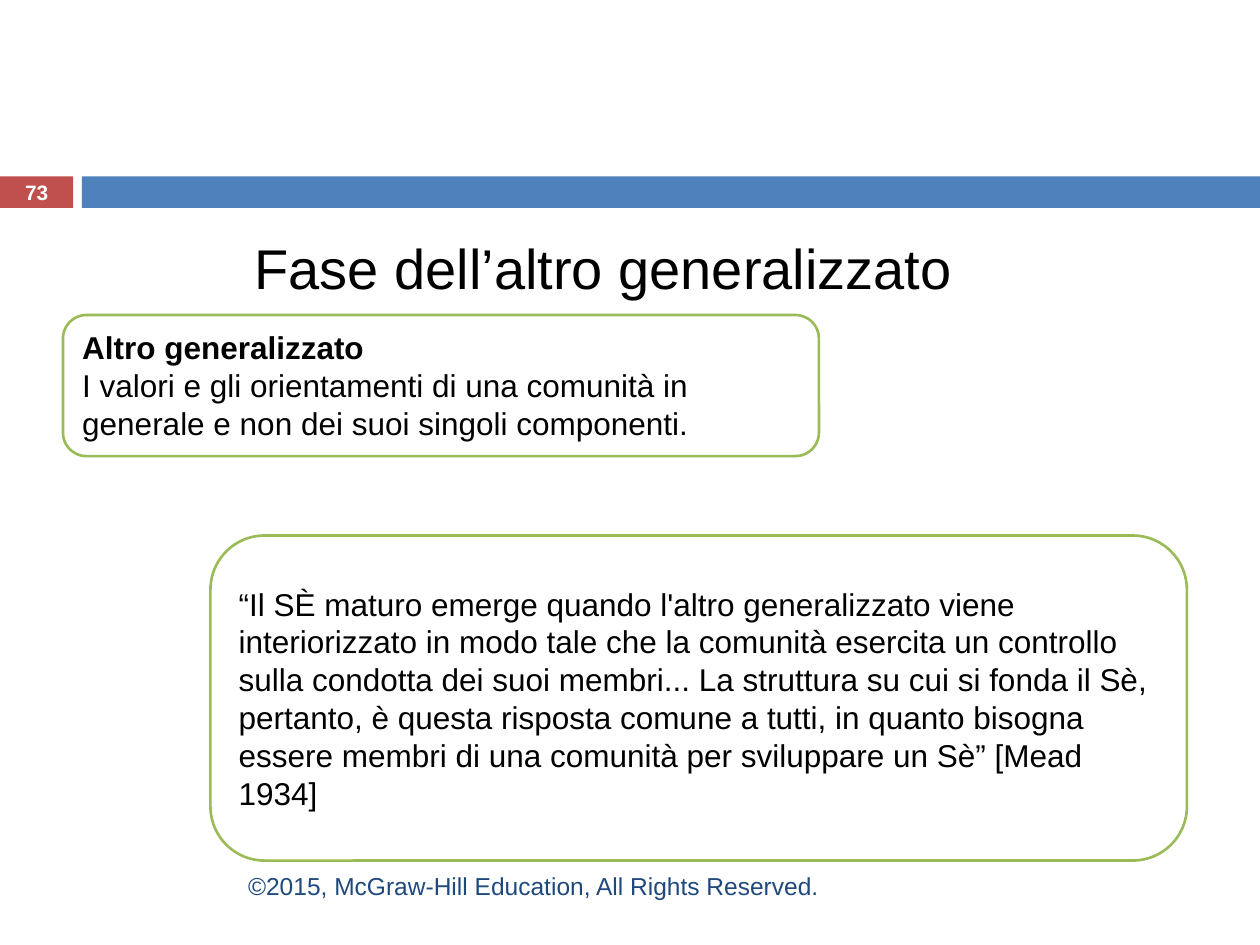
"""Build the slide on the generalized other phase."""
from dataclasses import dataclass

from lxml import etree
from pptx import Presentation
from pptx import util as u
from pptx.dml.color import RGBColor
from pptx.enum import shapes, text
from pptx.oxml import ns

BLACK = RGBColor(0x00, 0x00, 0x00)
WHITE = RGBColor(0xFF, 0xFF, 0xFF)
RED = RGBColor(0xC0, 0x50, 0x4D)
BLUE = RGBColor(0x4F, 0x81, 0xBD)
GREEN = RGBColor(0x9B, 0xBB, 0x59)
NAVY = RGBColor(0x1F, 0x49, 0x7D)
MIDDLE = text.MSO_ANCHOR.MIDDLE
TOP = text.MSO_ANCHOR.TOP
LEFT, CENTER, RIGHT = text.PP_ALIGN.LEFT, text.PP_ALIGN.CENTER, text.PP_ALIGN.RIGHT


@dataclass
class Box:
    left: float
    top: float
    width: float
    height: float

    def emu(self) -> tuple:
        return tuple(u.Inches(v) for v in (self.left, self.top, self.width, self.height))


@dataclass
class Line:
    words: str
    size: float = 18
    color: RGBColor = BLACK
    bold: bool = False
    align: text.PP_ALIGN = LEFT


@dataclass
class Label:
    box: Box
    line: Line


@dataclass
class Card:
    box: Box
    lines: list[Line]
    anchor: text.MSO_ANCHOR


BARS = [(Box(0, 1.4, 0.58, 0.25), RED), (Box(0.65, 1.4, 9.35, 0.25), BLUE)]
HEADING = Label(Box(0.67, 1.75, 8.92, 4.92), Line("Fase dell’altro generalizzato", 32))
NUMBER = Label(Box(0, 1.39, 0.58, 0.27), Line("73", 11.9, WHITE, True, CENTER))
DEFINITION = Card(Box(0.5, 2.5, 6, 1.12), [
    Line("Altro generalizzato", bold=True),
    Line("I valori e gli orientamenti di una comunità in generale e non dei suoi "
         "singoli componenti."),
], TOP)
COPYRIGHT = Label(Box(0.67, 6.83, 5.93, 0.4),
                  Line("©2015, McGraw-Hill Education, All Rights Reserved.", 14, NAVY, align=RIGHT))
QUOTE = Card(Box(1.67, 4.25, 7.75, 2.58), [
    Line("“Il SÈ maturo emerge quando l'altro generalizzato viene interiorizzato in modo "
         "tale che la comunità esercita un controllo sulla condotta dei suoi membri... "
         "La struttura su cui si fonda il Sè, pertanto, è questa risposta comune a tutti, "
         "in quanto bisogna essere membri di una comunità per sviluppare un Sè” [Mead 1934]"),
], MIDDLE)


def write(tf, lines: list[Line], anchor: text.MSO_ANCHOR) -> None:
    tf.word_wrap = True
    tf.vertical_anchor = anchor
    for i, line in enumerate(lines):
        p = tf.paragraphs[0] if i == 0 else tf.add_paragraph()
        p.alignment = line.align
        p.space_before = u.Pt(0)
        r = p.add_run()
        r.text = line.words
        r.font.color.rgb = line.color
        formats = {"name": "Arial", "size": u.Pt(line.size), "bold": line.bold}
        for key, value in formats.items():
            setattr(r.font, key, value)


def add_shape(s, kind, box: Box, fill: RGBColor):
    sp = s.shapes.add_shape(kind, *box.emu())
    sp.shadow.inherit = False
    sp.fill.solid()
    sp.fill.fore_color.rgb = fill
    return sp


def add_bar(s, box: Box, fill: RGBColor) -> None:
    add_shape(s, shapes.MSO_SHAPE.RECTANGLE, box, fill).line.fill.background()


def add_card(s, card: Card) -> None:
    sp = add_shape(s, shapes.MSO_SHAPE.ROUNDED_RECTANGLE, card.box, WHITE)
    sp.line.color.rgb = GREEN
    sp.line.width = u.Pt(1.5)
    write(sp.text_frame, card.lines, card.anchor)


def add_label(s, label: Label) -> None:
    sp = s.shapes.add_textbox(*label.box.emu())
    write(sp.text_frame, [label.line], MIDDLE)


def fill_body(sp, label: Label) -> None:
    sp.left, sp.top, sp.width, sp.height = label.box.emu()
    tf = sp.text_frame
    tf.auto_size = text.MSO_AUTO_SIZE.NONE
    tf.margin_top = u.Inches(0.1)
    p = tf.paragraphs[0]
    p.level = 3
    pPr = p._p.get_or_add_pPr()
    pPr.set("marL", str(u.Inches(1.25)))
    pPr.set("indent", "0")
    etree.SubElement(pPr, ns.qn("a:buNone"))
    write(tf, [label.line], TOP)


def main() -> None:
    prs = Presentation()
    prs.slide_width, prs.slide_height = u.Inches(10), u.Inches(7.5)
    s = prs.slides.add_slide(prs.slide_layouts[1])
    title = s.shapes.title.element
    title.getparent().remove(title)
    fill_body(s.placeholders[1], HEADING)
    for box, fill in BARS:
        add_bar(s, box, fill)
    add_label(s, NUMBER)
    add_card(s, DEFINITION)
    add_label(s, COPYRIGHT)
    add_card(s, QUOTE)
    prs.save("out.pptx")


if __name__ == "__main__":
    main()
